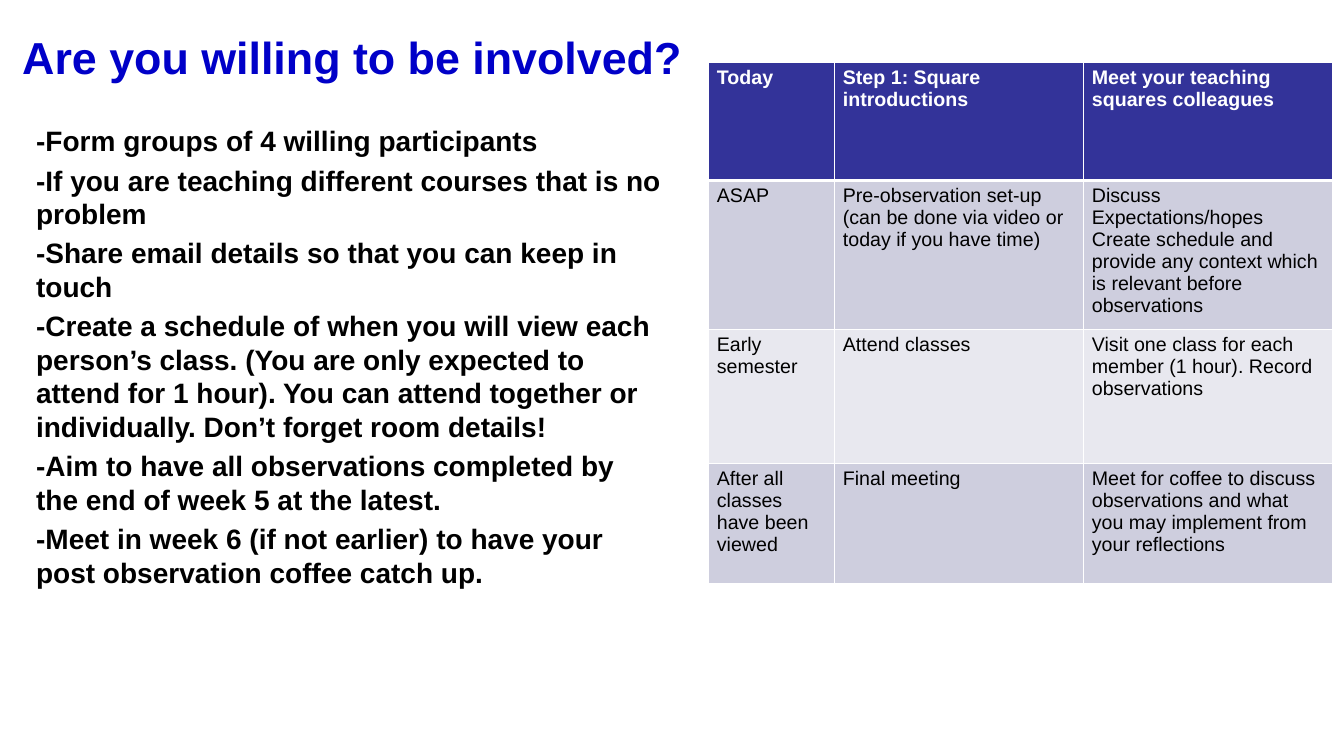
"""Build the slide that invites colleagues to join teaching squares."""
from lxml import etree
from pptx import Presentation, util as u
from pptx.dml.color import RGBColor
from pptx.enum import text as t
from pptx.oxml.ns import qn

TITLE = "Are you willing to be involved?"
STEPS = [
    "-Form groups of 4 willing participants",
    "-If you are teaching different courses that is no problem",
    "-Share email details so that you can keep in touch",
    "-Create a schedule of when you will view each person’s class. "
    "(You are only expected to attend for 1 hour). You can attend together "
    "or individually. Don’t forget room details!",
    "-Aim to have all observations completed by the end of week 5 at the latest.",
    "-Meet in week 6 (if not earlier) to have your post observation coffee catch up.",
]
PLAN = [
    (["Today"], ["Step 1: Square introductions"],
     ["Meet your teaching squares colleagues"]),
    (["ASAP"],
     ["Pre-observation set-up (can be done via video or today if you have time)"],
     ["Discuss Expectations/hopes",
      "Create schedule and provide any context which is relevant before observations"]),
    (["Early semester"], ["Attend classes"],
     ["Visit one class for each member (1 hour). Record observations"]),
    (["After all classes have been viewed"], ["Final meeting"],
     ["Meet for coffee to discuss observations and what you may implement "
      "from your reflections"]),
]
COLS = (1.25, 2.47, 2.47)
ROWS = (1.17, 1.19, 1.33, 1.19)
WIDE, HIGH = 13.33, 7.5
BLUE = RGBColor(0x00, 0x00, 0xC8)
NAVY = RGBColor(0x33, 0x33, 0x99)
LILAC = RGBColor(0xCE, 0xCE, 0xDE)
PALE = RGBColor(0xE8, 0xE8, 0xEF)
BLACK = RGBColor(0, 0, 0)
WHITE = RGBColor(255, 255, 255)


def write(frame, lines, size, color=BLACK, bold=True, gap=0):
    frame.word_wrap = True
    for i, line in enumerate(lines):
        para = frame.paragraphs[0] if i == 0 else frame.add_paragraph()
        para.alignment = t.PP_ALIGN.LEFT
        para.space_before = u.Pt(gap)
        run = para.add_run()
        run.text = line
        font = run.font
        font.name, font.size, font.bold = "Arial", u.Pt(size), bold
        font.color.rgb = color


def edge(cell, side, width):
    props = cell._tc.get_or_add_tcPr()
    line = etree.SubElement(props, qn("a:ln" + side), w=str(u.Pt(width)))
    fill = etree.SubElement(line, qn("a:solidFill"))
    etree.SubElement(fill, qn("a:srgbClr"), val=str(WHITE))


def place(shape, left, top, width, height):
    shape.left, shape.top = u.Inches(left), u.Inches(top)
    shape.width, shape.height = u.Inches(width), u.Inches(height)


def main():
    deck = Presentation()
    deck.slide_width, deck.slide_height = u.Inches(WIDE), u.Inches(HIGH)
    slide = deck.slides.add_slide(deck.slide_layouts[5])

    title = slide.shapes.title
    place(title, 0.12, 0.24, 0.9 * WIDE, 0.71)
    title.text_frame.auto_size = t.MSO_AUTO_SIZE.NONE
    title.text_frame.vertical_anchor = t.MSO_ANCHOR.TOP
    write(title.text_frame, [TITLE], 32, BLUE)

    body = slide.shapes.add_textbox(0, 0, 0, 0)
    place(body, 0.26, 1.18, 0.48 * WIDE, 0.82)
    write(body.text_frame, STEPS, 20, gap=4)

    grid = slide.shapes.add_table(
        len(ROWS), len(COLS), u.Inches(7.03), u.Inches(0.62),
        u.Inches(sum(COLS)), u.Inches(sum(ROWS))).table
    for col, width in zip(grid.columns, COLS):
        col.width = u.Inches(width)
    for row, height in zip(grid.rows, ROWS):
        row.height = u.Inches(height)
    for r, row in enumerate(PLAN):
        head = r == 0
        for c, lines in enumerate(row):
            cell = grid.cell(r, c)
            cell.margin_left = cell.margin_right = u.Inches(0.08)
            cell.margin_top = cell.margin_bottom = u.Inches(0.04)
            for side in "LRB" if r == 1 else "LRTB":
                edge(cell, side, 3 if head and side == "B" else 1)
            cell.fill.solid()
            cell.fill.fore_color.rgb = NAVY if head else LILAC if r % 2 else PALE
            write(cell.text_frame, lines, 14, WHITE if head else BLACK, head)
    deck.save("out.pptx")


if __name__ == "__main__":
    main()
